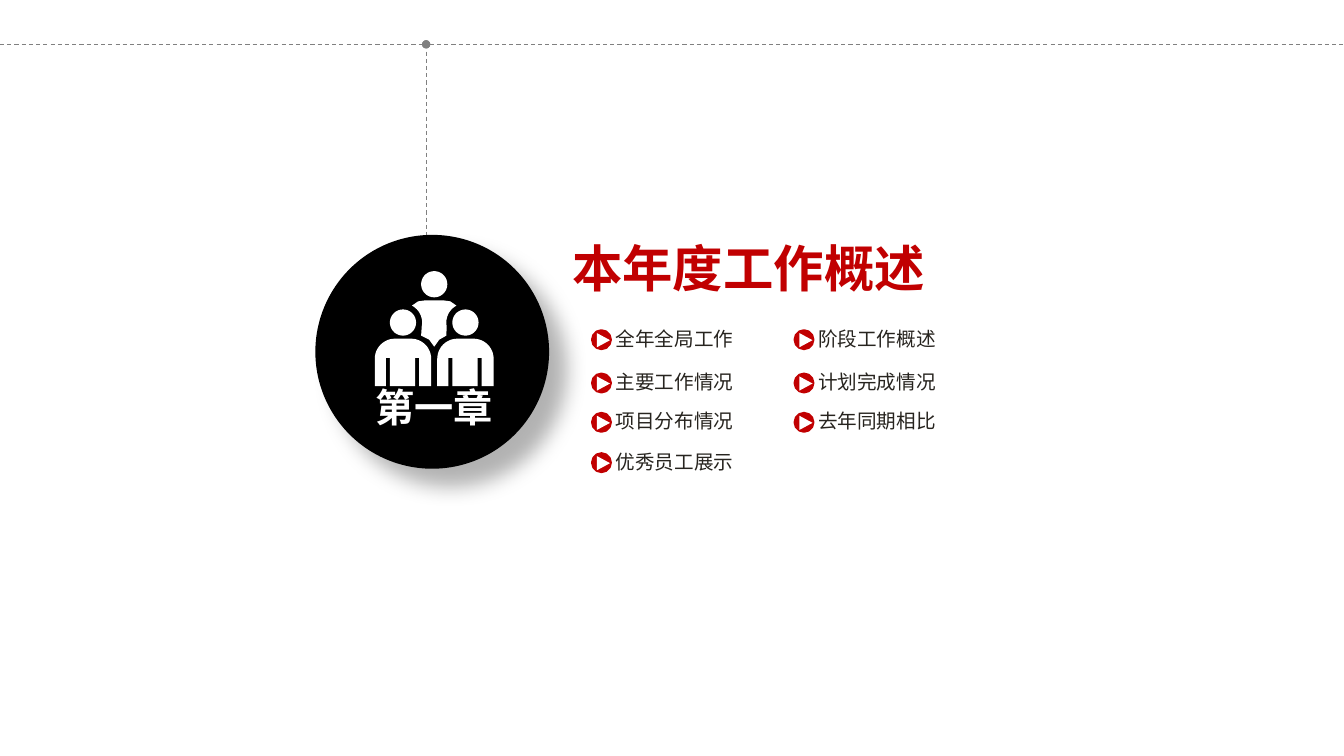
from math import cos, radians, sin

from lxml.etree import SubElement
from pptx import Presentation
from pptx.dml.color import RGBColor
from pptx.enum.dml import MSO_LINE
from pptx.enum.shapes import MSO_CONNECTOR, MSO_SHAPE
from pptx.enum.text import MSO_ANCHOR, PP_ALIGN
from pptx.oxml.ns import qn
from pptx.util import Pt

PX = 9144
FONT = "Noto Sans CJK SC"
HUES = {"red": "C10001", "black": "000000", "white": "FFFFFF",
        "gray": "808080", "ink": "27241F"}


def arc(x, y, size, start, end, steps=12):
    """Return points along an arc, with angles in degrees, clockwise."""
    turns = [radians(start + (end - start) * i / steps) for i in range(steps + 1)]
    return [(x + size * cos(t), y + size * sin(t)) for t in turns]


class Deck:
    """Holds the style and the current slide."""

    def __init__(self, wide, high):
        self.show = Presentation()
        self.show.slide_width = wide * PX
        self.show.slide_height = high * PX
        self.slide = self.show.slides.add_slide(self.show.slide_layouts[6])
        self.shapes = self.slide.shapes

    def hue(self, name):
        return RGBColor.from_string(HUES[name])

    def paint(self, shape, fill, edge=None):
        shape.shadow.inherit = False
        shape.fill.solid()
        shape.fill.fore_color.rgb = self.hue(fill)
        if edge:
            shape.line.color.rgb = self.hue(fill)
            shape.line.width = Pt(edge)
        else:
            shape.line.fill.background()
        return shape

    def shape(self, kind, box, fill, edge=None, home=None):
        home = home or self.shapes
        return self.paint(home.add_shape(kind, *[n * PX for n in box]), fill, edge)

    def shade(self, shape, blur, dist, angle, alpha):
        list_ = shape._element.spPr.find(qn("a:effectLst"))
        cast = SubElement(list_, qn("a:outerShdw"), blurRad=str(Pt(blur)),
                          dist=str(Pt(dist)), dir=str(angle * 60000),
                          algn="tl", rotWithShape="0")
        tone = SubElement(cast, qn("a:srgbClr"), val=HUES["black"])
        SubElement(tone, qn("a:alpha"), val=str(alpha * 1000))

    def line(self, start, end, dot=None):
        line = self.shapes.add_connector(
            MSO_CONNECTOR.STRAIGHT, *[n * PX for n in start + end])
        line.line.color.rgb = self.hue("gray")
        line.line.width = Pt(0.75)
        line.line.dash_style = MSO_LINE.DASH
        if dot:
            SubElement(line.line._get_or_add_ln(), qn(dot), type="oval")
        SubElement(line._element.spPr, qn("a:effectLst"))

    def icon(self, paths, fill):
        paths = [[(x * PX, y * PX) for x, y in path] for path in paths]
        pen = self.shapes.build_freeform(*paths[0][0], scale=1.0)
        for i, path in enumerate(paths):
            if i:
                pen.move_to(*path[0])
            pen.add_line_segments(path[1:], close=True)
        self.paint(pen.convert_to_shape(), fill)

    def text(self, words, box, size, fill, bold=False, align=PP_ALIGN.LEFT,
             anchor=MSO_ANCHOR.MIDDLE, inset=10, home=None):
        home = home or self.shapes
        frame = home.add_textbox(*[n * PX for n in box]).text_frame
        frame.word_wrap = True
        frame.vertical_anchor = anchor
        frame.margin_left = inset * PX
        frame.margin_right = frame.margin_top = frame.margin_bottom = 0
        if align == PP_ALIGN.CENTER:
            frame.margin_right = frame.margin_left
        para = frame.paragraphs[0]
        para.alignment = align
        run = para.add_run()
        run.text = words
        font = run.font
        font.size, font.bold = Pt(size), bold
        font.color.rgb = self.hue(fill)
        font.name = FONT
        SubElement(run._r.get_or_add_rPr(), qn("a:ea"), typeface=FONT)

    def item(self, words, x, y):
        home = self.shapes.add_group_shape().shapes
        self.text(words, (x, y, 134, 24), 14, "ink", anchor=MSO_ANCHOR.TOP,
                  inset=0, home=home)
        self.shape(MSO_SHAPE.OVAL, (x - 23, y + 4, 18, 18), "red", 2, home)
        play = self.shape(MSO_SHAPE.ISOSCELES_TRIANGLE,
                          (x - 19, y + 7, 14, 13), "white", home=home)
        play.rotation = 90


def team():
    """Return the outlines of three people."""
    paths = [arc(431, 282, 13, 0, 360, 36)]
    paths.append(arc(400, 320, 19, 12, -62) + [(415, 299), (422, 298), (440, 298), (447, 299)]
                 + arc(462, 320, 19, 242, 168)
                 + [(443, 333), (436, 337), (431, 344), (426, 337), (418, 333)])
    for x in (400, 462):
        body = [(x - 28, 383)] + arc(x - 8, 356, 20, 180, 270)
        body += arc(x + 8, 356, 20, 270, 360) + [(x + 28, 383)]
        for slot in (x + 12, x - 17):
            body += [(slot + 4, 383), (slot + 4, 355), (slot, 355), (slot, 383)]
        paths += [arc(x, 320, 13, 0, 360, 36), body]
    return paths


def main():
    deck = Deck(1334, 750)
    deck.line((0, 44), (423, 44), "a:tailEnd")
    deck.line((423, 44), (423, 233))
    disc = deck.shape(MSO_SHAPE.OVAL, (313, 233, 232, 232), "black")
    deck.shade(disc, 15, 18, 45, 30)
    deck.icon(team(), "white")
    deck.text("本年度工作概述", (513, 239, 485, 52), 36, "red", True, inset=55)
    rows = {324: ("全年全局工作", "阶段工作概述"),
            367: ("主要工作情况", "计划完成情况"),
            406: ("项目分布情况", "去年同期相比"),
            446: ("优秀员工展示",)}
    for y, row in rows.items():
        for i, words in enumerate(row):
            deck.item(words, 611 + 201 * i, y)
    deck.text("第一章", (360, 360, 142, 88), 28, "white", True, PP_ALIGN.CENTER)
    deck.line((423, 44), (1334, 44), "a:headEnd")
    deck.show.save("out.pptx")


if __name__ == "__main__":
    main()
